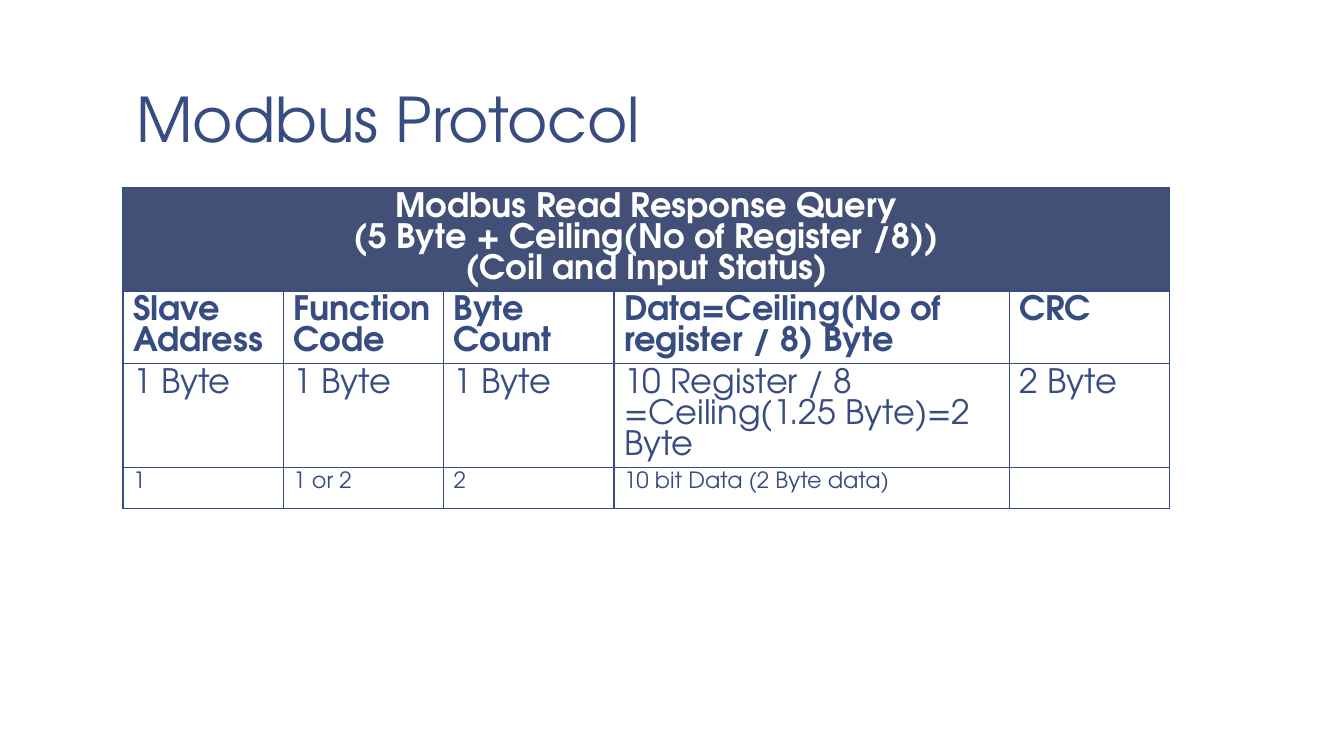
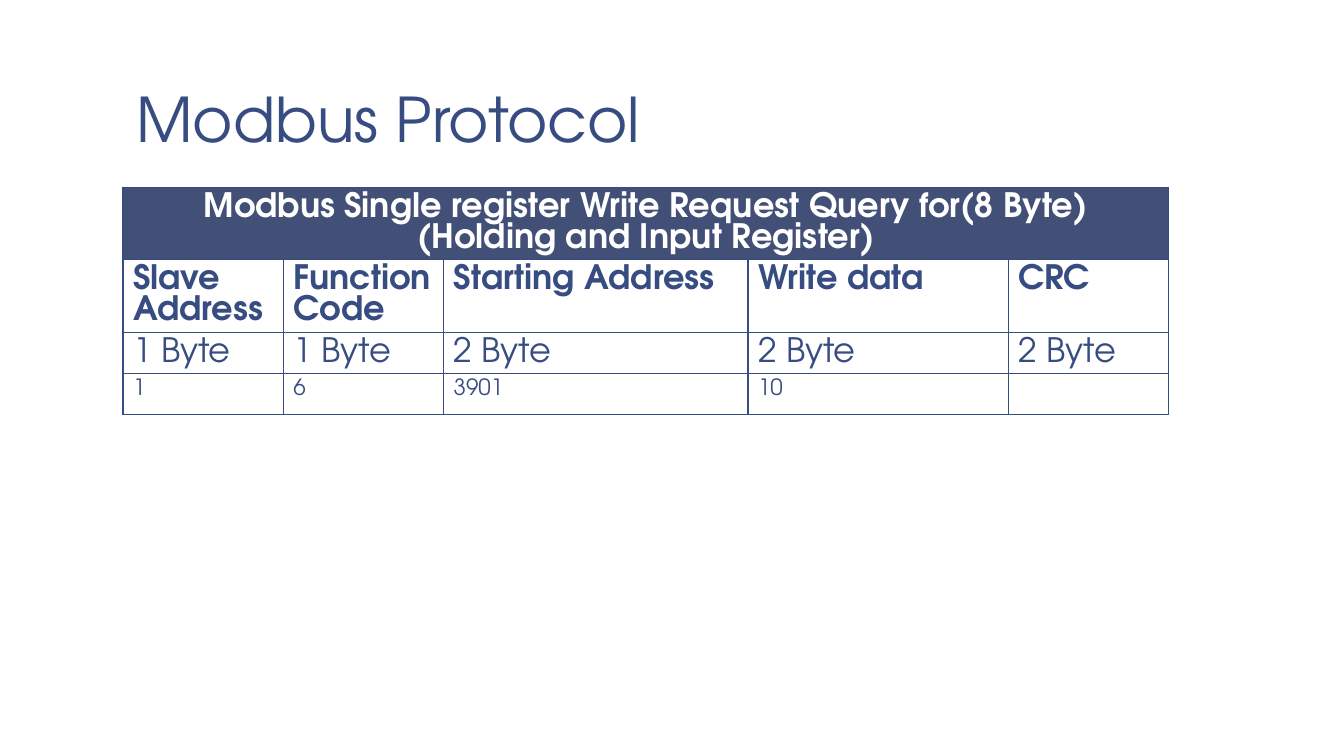
import pptx
import pptx.util
import pptx.dml.color
import pptx.enum.text
import lxml.etree

Inch = pptx.util.Inches
Pt = pptx.util.Pt
Align = pptx.enum.text.PP_ALIGN
FONT = "TeX Gyre Adventor"
HEX = {"navy": "374C81", "band": "424F77", "white": "FFFFFF"}
LEFT, TOP, ROW = 1.22, 1.86, 0.41
TITLE = "Modbus Protocol"

STYLES = [
    ("white", 24, True, Align.CENTER),
    ("navy", 24, True, Align.LEFT),
    ("navy", 24, False, Align.LEFT),
    ("navy", 16, False, Align.LEFT),
]

SLIDES = [
    {
        "cols": [1.59, 1.59, 1.69, 3.92, 1.59],
        "rows": [
            ["Modbus Read Response Query\n"
             "(5 Byte + Ceiling(No of Register /8))\n"
             "(Coil and Input Status)"],
            ["Slave Address", "Function\nCode", "Byte Count",
             "Data=Ceiling(No of register / 8) Byte", "CRC"],
            ["1 Byte", "1 Byte", "1 Byte",
             "10 Register / 8 =Ceiling(1.25 Byte)=2 Byte", "2 Byte"],
            ["1", "1 or 2", "2", "10 bit Data (2 Byte data)", ""],
        ],
    },
    {
        "cols": [1.59, 1.59, 3.02, 2.58, 1.59],
        "rows": [
            ["Modbus Single register Write Request Query for(8 Byte)\n"
             "(Holding and Input Register)"],
            ["Slave Address", "Function\nCode", "Starting Address",
             "Write data", "CRC"],
            ["1 Byte", "1 Byte", "2 Byte", "2 Byte", "2 Byte"],
            ["1", "6", "3901", "10", ""],
        ],
    },
]


def color(name):
    return pptx.dml.color.RGBColor.from_string(HEX[name])


def set_font(para, size, name, bold=False):
    font = para.font
    font.name, font.size, font.bold = FONT, Pt(size), bold
    font.color.rgb = color(name)


def add_edges(cell):
    props = cell._tc.get_or_add_tcPr()
    space = props.nsmap["a"]
    for spot, side in enumerate(("lnL", "lnR", "lnT", "lnB")):
        line = lxml.etree.Element(f"{{{space}}}{side}", w=str(Pt(1)))
        fill = lxml.etree.SubElement(line, f"{{{space}}}solidFill")
        lxml.etree.SubElement(fill, f"{{{space}}}srgbClr", val=HEX["navy"])
        props.insert(spot, line)


def add_title(slide):
    title = slide.shapes.title
    title.left, title.top = Inch(LEFT), Inch(0.08)
    title.width, title.height = Inch(11.11), Inch(1.53)
    frame = title.text_frame
    frame.text = TITLE
    frame.word_wrap = True
    frame.auto_size = pptx.enum.text.MSO_AUTO_SIZE.NONE
    frame.vertical_anchor = pptx.enum.text.MSO_ANCHOR.BOTTOM
    frame.margin_left = frame.margin_right = Inch(0.13)
    frame.margin_top = frame.margin_bottom = Inch(0.07)
    para = frame.paragraphs[0]
    para.alignment, para.line_spacing = Align.LEFT, 0.85
    set_font(para, 44, "navy")


def add_grid(slide, cols, rows):
    table = slide.shapes.add_table(
        len(rows), len(cols), Inch(LEFT), Inch(TOP),
        Inch(sum(cols)), Inch(ROW * len(rows))).table
    table.first_row = table.horz_banding = False
    for col, width in zip(table.columns, cols):
        col.width = Inch(width)
    table.cell(0, 0).merge(table.cell(0, len(cols) - 1))
    for r, (texts, style) in enumerate(zip(rows, STYLES)):
        name, size, bold, align = style
        for c in range(len(cols)):
            cell = table.cell(r, c)
            if r == 0:
                cell.fill.solid()
                cell.fill.fore_color.rgb = color("band")
            else:
                cell.fill.background()
            add_edges(cell)
            if c < len(texts):
                cell.text = texts[c]
                for para in cell.text_frame.paragraphs:
                    para.alignment = align
                    set_font(para, size, name, bold)


def main():
    deck = pptx.Presentation()
    deck.slide_width, deck.slide_height = Inch(13.33), Inch(7.5)
    for data in SLIDES:
        slide = deck.slides.add_slide(deck.slide_layouts[5])
        add_title(slide)
        add_grid(slide, data["cols"], data["rows"])
    deck.save("out.pptx")


if __name__ == "__main__":
    main()
